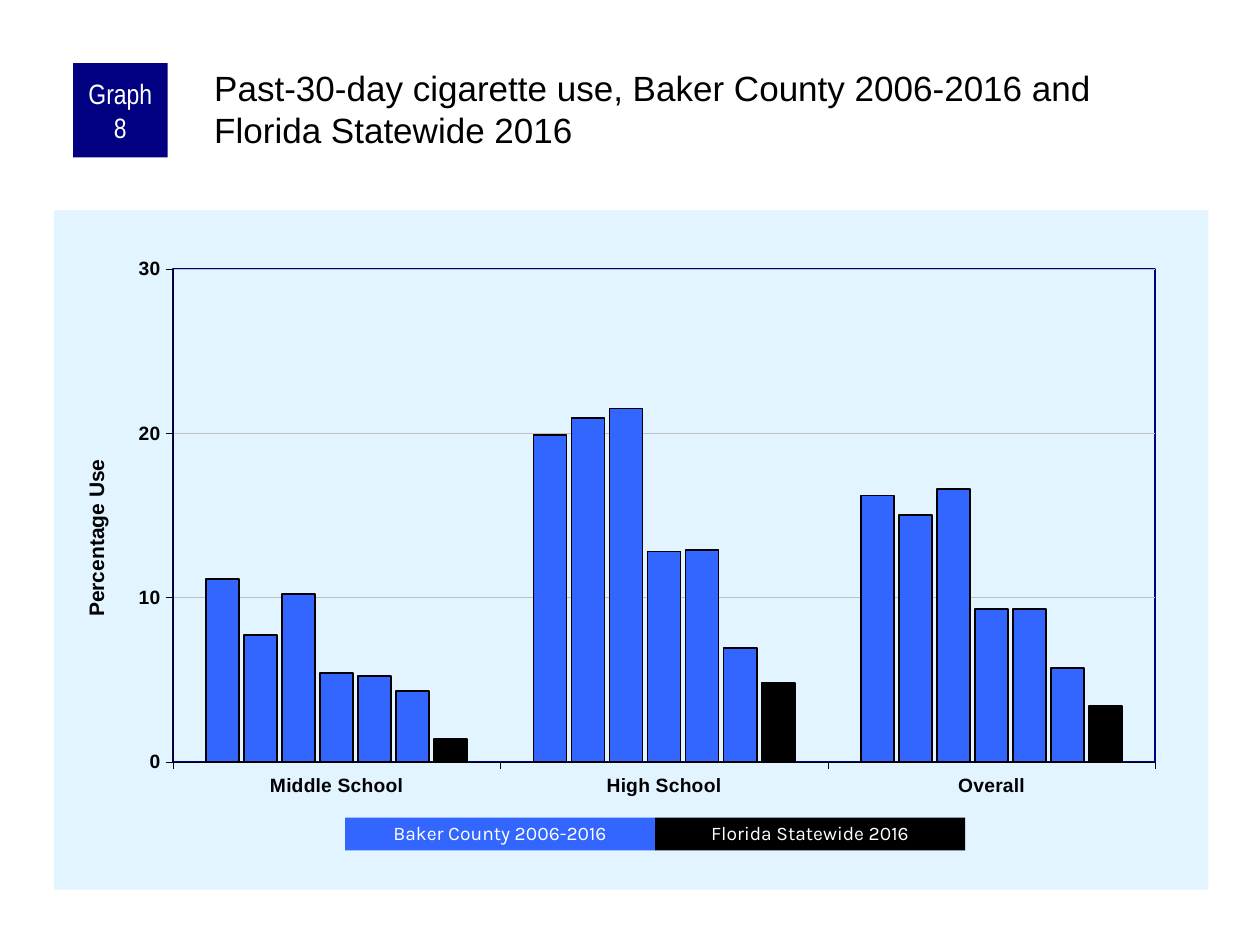
from dataclasses import dataclass

from lxml import etree
from pptx import Presentation
from pptx import util as u
from pptx.chart.data import CategoryChartData
from pptx.dml.color import RGBColor
from pptx.enum import chart as charts, shapes, text
from pptx.oxml import parse_xml
from pptx.oxml.ns import nsdecls, qn


@dataclass(frozen=True)
class Theme:
    black: str = "000000"
    white: str = "FFFFFF"
    navy: str = "000080"
    county: str = "3366FF"
    panel: str = "E1F4FF"
    grid: str = "C0C0C0"
    body: str = "Arial"
    badge: str = "Arial Narrow"
    legend: str = "Karla"
    title_size: int = 20
    badge_size: int = 16
    axis_title_size: int = 12
    label_size: int = 11
    chart_size: int = 8


def style_font(font, name, size, color, bold=False):
    font.name = name
    font.size = u.Pt(size)
    font.bold = bold
    font.color.rgb = RGBColor.from_string(color)


def write_text(frame, words, *, font, size, color, align=text.PP_ALIGN.LEFT,
               anchor=text.MSO_ANCHOR.MIDDLE, insets=(0.1, 0.05, 0.1, 0.05), spacing=None):
    frame.word_wrap = True
    frame.auto_size = text.MSO_AUTO_SIZE.NONE
    frame.vertical_anchor = anchor
    (frame.margin_left, frame.margin_top,
     frame.margin_right, frame.margin_bottom) = map(u.Inches, insets)
    para = frame.paragraphs[0]
    para.alignment = align
    para.line_spacing = spacing
    span = para.add_run()
    span.text = words
    style_font(span.font, font, size, color)


def style_line(line, color, width):
    line.color.rgb = RGBColor.from_string(color)
    line.width = u.Pt(width)


def manual_layout(x, y, w=None, h=None):
    """Chart layout in fractions of the chart; a size makes it the inner plot."""
    target = '<c:layoutTarget val="inner"/>' if w else ""
    size = f'<c:w val="{w}"/><c:h val="{h}"/>' if w else ""
    return parse_xml(
        f'<c:layout {nsdecls("c")}><c:manualLayout>{target}'
        '<c:xMode val="edge"/><c:yMode val="edge"/>'
        f'<c:x val="{x}"/><c:y val="{y}"/>{size}</c:manualLayout></c:layout>')


def area_format(fill=None, line=None, width=1):
    """Shape properties for the chart areas that python-pptx does not reach."""
    def paint(color):
        if color is None:
            return "<a:noFill/>"
        return f'<a:solidFill><a:srgbClr val="{color}"/></a:solidFill>'
    return parse_xml(
        f'<c:spPr {nsdecls("c", "a")}>{paint(fill)}'
        f'<a:ln w="{u.Pt(width)}">{paint(line)}</a:ln></c:spPr>')


class SlideBuilder:
    def __init__(self, page, theme):
        self.page = page
        self.theme = theme

    def title(self, words, *place):
        box = self.page.shapes.title
        box.left, box.top, box.width, box.height = map(u.Inches, place)
        write_text(box.text_frame, words, font=self.theme.body,
                   size=self.theme.title_size, color=self.theme.black,
                   anchor=text.MSO_ANCHOR.TOP, insets=(0.03, 0.03, 0, 0))

    def block(self, words, *place, fill, **format):
        box = self.page.shapes.add_shape(
            shapes.MSO_SHAPE.RECTANGLE, *map(u.Inches, place))
        box.shadow.inherit = False
        box.fill.solid()
        box.fill.fore_color.rgb = RGBColor.from_string(fill)
        box.line.fill.background()
        write_text(box.text_frame, words, color=self.theme.white,
                   align=text.PP_ALIGN.CENTER, **format)

    def column_chart(self, categories, rows, colors, axis_title, *place):
        theme = self.theme
        data = CategoryChartData()
        data.categories = categories
        for number, values in enumerate(rows, 1):
            data.add_series(f"Series {number}", values)
        chart = self.page.shapes.add_chart(
            charts.XL_CHART_TYPE.COLUMN_CLUSTERED, *map(u.Inches, place), data).chart
        chart.has_legend = False
        chart.has_title = False
        style_font(chart.font, theme.body, theme.chart_size, theme.black)

        plot = chart.plots[0]
        plot.vary_by_categories = False
        plot.gap_width = 200
        plot.overlap = -15
        for series, color in zip(plot.series, colors):
            series.format.fill.solid()
            series.format.fill.fore_color.rgb = RGBColor.from_string(color)
            style_line(series.format.line, theme.black, 1)

        for axis in (chart.category_axis, chart.value_axis):
            axis.major_tick_mark = charts.XL_TICK_MARK.OUTSIDE
            axis.minor_tick_mark = charts.XL_TICK_MARK.NONE
            style_line(axis.format.line, theme.black, 0.25)
            style_font(axis.tick_labels.font, theme.body, theme.label_size,
                       theme.black, bold=True)
        self.value_axis(chart.value_axis, axis_title)
        self.chart_areas(chart)

    def value_axis(self, axis, words):
        theme = self.theme
        axis.minimum_scale, axis.maximum_scale, axis.major_unit = 0, 30, 10
        axis.has_major_gridlines = True
        style_line(axis.major_gridlines.format.line, theme.grid, 0.25)
        frame = axis.axis_title.text_frame
        span = frame.paragraphs[0].add_run()
        span.text = words
        style_font(span.font, theme.body, theme.axis_title_size, theme.black, bold=True)
        title = axis.axis_title._element
        body = title.find(".//" + qn("a:bodyPr"))
        body.set("rot", "-5400000")
        body.set("vert", "horz")
        for layout in title.findall(qn("c:layout")):
            title.remove(layout)
        title.find(qn("c:tx")).addnext(manual_layout(0.022, 0.361))

    def chart_areas(self, chart):
        root = chart._chartSpace.find(qn("c:chart"))
        root.addnext(area_format(fill=self.theme.panel))
        plot_area = root.find(qn("c:plotArea"))
        for layout in plot_area.findall(qn("c:layout")):
            plot_area.remove(layout)
        plot_area.insert(0, manual_layout(0.103, 0.086, 0.851, 0.726))
        plot_area.append(area_format(line=self.theme.navy))


def main():
    theme = Theme()
    deck = Presentation()
    deck.slide_width, deck.slide_height = u.Inches(10), u.Inches(7.5)
    slide = SlideBuilder(deck.slides.add_slide(deck.slide_layouts[5]), theme)

    slide.title("Past-30-day cigarette use, Baker County 2006-2016 and Florida Statewide 2016",
                1.67, 0.5, 7.92, 0.83)
    county_rows = [(11.1, 19.9, 16.2), (7.7, 20.9, 15), (10.2, 21.5, 16.6),
                   (5.4, 12.8, 9.3), (5.2, 12.9, 9.3), (4.3, 6.9, 5.7)]
    state_row = (1.4, 4.8, 3.4)
    slide.column_chart(("Middle School", "High School", "Overall"),
                       county_rows + [state_row],
                       [theme.county] * len(county_rows) + [theme.black],
                       "Percentage Use", 0.43, 1.67, 9.16, 5.39)
    slide.block("Graph 8", 0.58, 0.5, 0.75, 0.75, fill=theme.navy, font=theme.badge,
                size=theme.badge_size, insets=(0.05, 0, 0.05, 0))

    key_left, key_width = 2.74, 2.46
    keys = (("Baker County 2006-2016", theme.county), ("Florida Statewide 2016", theme.black))
    for index, (words, color) in enumerate(keys):
        slide.block(words, key_left + index * key_width, 6.49, key_width, 0.26, fill=color,
                    font=theme.legend, size=theme.label_size, spacing=0.9)
    deck.save("out.pptx")


if __name__ == "__main__":
    main()
